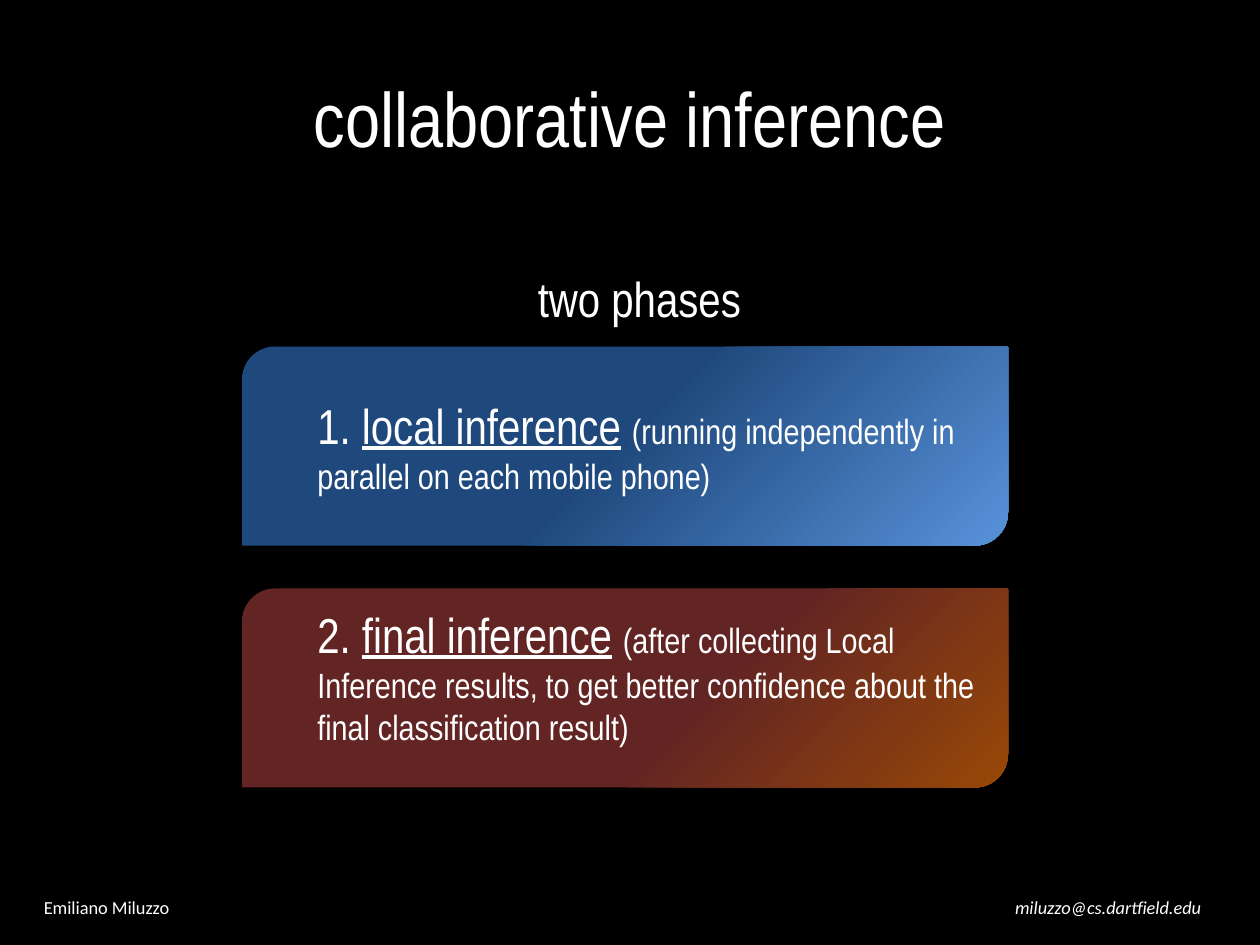
from lxml import etree
from pptx import Presentation
from pptx.dml.color import RGBColor
from pptx.enum.shapes import MSO_SHAPE
from pptx.enum.text import MSO_ANCHOR, PP_ALIGN
from pptx.oxml import parse_xml
from pptx.util import Inches, Pt

LEFT, CENTER = PP_ALIGN.LEFT, PP_ALIGN.CENTER
TOP, MIDDLE = MSO_ANCHOR.TOP, MSO_ANCHOR.MIDDLE
CARD = MSO_SHAPE.ROUND_2_DIAG_RECTANGLE
NARROW, PLAIN = "Arial Narrow", "Calibri"
DRAW = "http://schemas.openxmlformats.org/drawingml/2006/main"

# Content
TITLE = "collaborative inference"
LEAD = "two phases"
AUTHOR, MAIL = "Emiliano Miluzzo", "miluzzo@cs.dartfield.edu"
# number, name, detail, text top, text height, gradient stops
PHASES = [
    ("1. ", "local inference",
     "(running independently in parallel on each mobile phone)",
     3.09, 0.91, [(0.03, "558ED5"), (0.51, "1F497D")]),
    ("2. ", "final inference",
     "(after collecting Local Inference results, to get better confidence "
     "about the final classification result)",
     4.75, 1.25, [(0, "984807"), (0.41, "632523")]),
]
CARD_TOP, CARD_STEP = 2.75, 1.92


def color(code):
    return RGBColor.from_string(code)


def write(runs, box=None, shape=None, size=28, font=NARROW, align=LEFT,
          anchor=TOP, italic=None):
    """Fill a shape or a new text box with (text, format) runs."""
    if shape is None:
        shape = slide.shapes.add_textbox(*map(Inches, box))
    frame = shape.text_frame
    frame.word_wrap = True
    frame.vertical_anchor = anchor
    para = frame.paragraphs[0]
    para.alignment = align
    for text, form in runs:
        run = para.add_run()
        run.text = text
        run.font.name = font
        run.font.size = Pt(form.get("size", size))
        run.font.underline = form.get("line")
        run.font.italic = italic
        run.font.color.rgb = color("FFFFFF")


def shade(shape, stops):
    """Radial gradient that spreads from the lower right corner."""
    shape.fill.gradient()
    for stop, (pos, code) in zip(shape.fill.gradient_stops, stops):
        stop.position = pos
        stop.color.rgb = color(code)
    grad = shape.element.spPr.find(f"{{{DRAW}}}gradFill")
    grad.remove(grad.find(f"{{{DRAW}}}lin"))
    radial = parse_xml(f'<a:path xmlns:a="{DRAW}" path="circle"/>')
    etree.SubElement(radial, f"{{{DRAW}}}fillToRect", l="100000", t="100000")
    grad.append(radial)


deck = Presentation()
deck.slide_width, deck.slide_height = Inches(10), Inches(7.5)
slide = deck.slides.add_slide(deck.slide_layouts[5])
slide.background.fill.solid()
slide.background.fill.fore_color.rgb = color("000000")

# Title and lead
title = slide.shapes.title
title.left, title.top, title.width, title.height = map(
    Inches, (0.5, 0.3, 9, 1.25))
write([(TITLE, {})], shape=title, size=44, align=CENTER, anchor=MIDDLE)
write([(LEAD, {})], (4.17, 2.08, 1.93, 0.57))

# Phase cards
for i, (num, name, detail, top, height, stops) in enumerate(PHASES):
    card = slide.shapes.add_shape(
        CARD, Inches(1.92), Inches(CARD_TOP + i * CARD_STEP),
        Inches(6.08), Inches(1.58))
    card.shadow.inherit = False
    card.line.fill.background()
    shade(card, stops)
    write([(num, {}), (name, {"line": True}), (" ", {}),
           (detail, {"size": 20})], (2.42, top, 5.58, height))

# Footer
write([(AUTHOR, {})], (0.25, 7, 2.67, 0.4), size=10.5, font=PLAIN,
      anchor=MIDDLE)
write([(MAIL, {})], (6.92, 7, 3.75, 0.4), size=10.5, font=PLAIN,
      align=CENTER, anchor=MIDDLE, italic=True)

deck.save("out.pptx")
